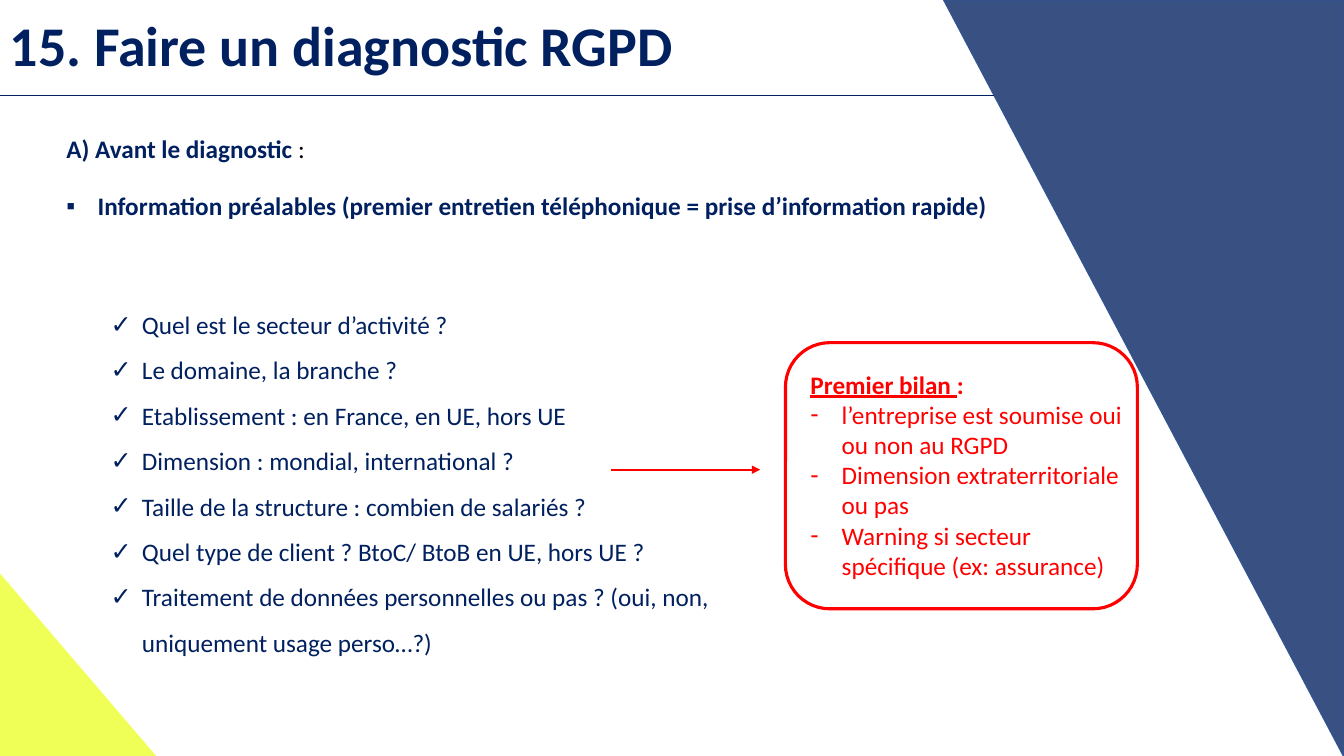
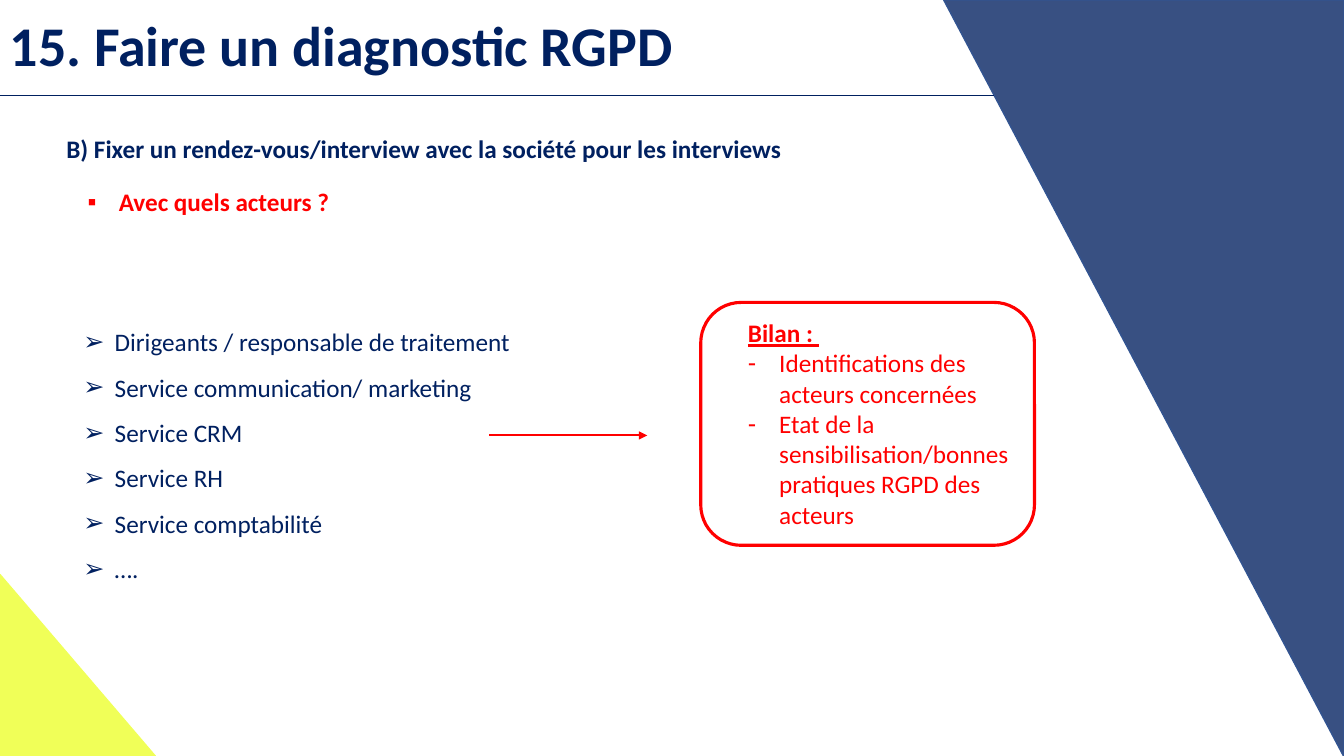
from lxml.etree import SubElement
from pptx import Presentation
from pptx.dml.color import RGBColor
from pptx.enum.shapes import MSO_CONNECTOR as Connector, MSO_SHAPE as Shape
from pptx.enum.text import MSO_ANCHOR as Anchor
from pptx.oxml.ns import qn
from pptx.util import Inches, Pt

NAVY = RGBColor(0x00, 0x20, 0x60)
EDGE_BLUE = RGBColor(0x32, 0x54, 0x91)
YELLOW = RGBColor(0xF0, 0xFF, 0x58)
RED = RGBColor(0xFF, 0x00, 0x00)
BLACK = RGBColor(0x00, 0x00, 0x00)
FONT = "Calibri"
INDENT = Inches(0.31)
TITLE = "15. Faire un diagnostic RGPD"

PAGES = [
    {
        "heading": ("A) Avant le diagnostic ", ":"),
        "heading_at": (0.56, 1.27, 4.09, 0.4),
        "topic": "Information préalables (premier entretien téléphonique = prise d’information rapide)",
        "topic_at": (0.56, 1.84, 9.67, 0.4),
        "topic_color": NAVY,
        "mark": "✓",
        "items": [
            "Quel est le secteur d’activité ?",
            "Le domaine, la branche ?",
            "Etablissement : en France, en UE, hors UE",
            "Dimension : mondial, international ?",
            "Taille de la structure : combien de salariés ?",
            "Quel type de client ? BtoC/ BtoB en UE, hors UE ?",
            "Traitement de données personnelles ou pas ? (oui, non, uniquement usage perso…?)",
        ],
        "items_at": (1, 2.87, 6.34, 3.69),
        "arrow": (6.06, 7.54, 4.66),
        "frame_at": (7.79, 3.4, 3.49, 2.64),
        "summary": ("Premier bilan ", ":"),
        "findings": [
            "l’entreprise est soumise oui ou non au RGPD",
            "Dimension extraterritoriale ou pas",
            "Warning si secteur spécifique (ex: assurance)",
        ],
        "findings_at": (7.94, 3.61, 3.33, 2.22),
    },
    {
        "heading": ("B) Fixer un rendez-vous/interview avec la société pour les interviews", ""),
        "heading_at": (0.56, 1.27, 8.96, 0.4),
        "topic": "Avec quels acteurs ?",
        "topic_at": (0.77, 1.8, 6.86, 0.4),
        "topic_color": RED,
        "mark": "➢",
        "items": [
            "Dirigeants / responsable de traitement",
            "Service communication/ marketing",
            "Service CRM",
            "Service RH",
            "Service comptabilité",
            "….",
        ],
        "items_at": (0.73, 3.04, 4.57, 2.78),
        "arrow": (4.85, 6.42, 4.32),
        "frame_at": (6.95, 3, 3.31, 2.41),
        "summary": ("Bilan : ", ""),
        "findings": [
            "Identifications des acteurs concernées",
            "Etat de la sensibilisation/bonnes pratiques RGPD des acteurs",
        ],
        "findings_at": (7.32, 3.1, 2.82, 2.22),
    },
]


def inches(values):
    return [Inches(value) for value in values]


def add_panel(page, kind, at, line_color, width, fill=None, alpha=None):
    panel = page.shapes.add_shape(kind, *inches(at))
    panel.shadow.inherit = False
    panel.line.color.rgb = line_color
    panel.line.width = Pt(width)
    if fill is None:
        panel.fill.background()
    else:
        panel.fill.solid()
        panel.fill.fore_color.rgb = fill
    if alpha is not None:
        color = panel.fill._xPr.find(".//" + qn("a:srgbClr"))
        SubElement(color, qn("a:alpha"), val=str(alpha * 1000))
    return panel


def add_line(page, start, end, y, color, width, arrow=False):
    line = page.shapes.add_connector(Connector.STRAIGHT, *inches((start, y, end, y)))
    line.line.color.rgb = color
    line.line.width = Pt(width)
    if arrow:
        SubElement(line.line._get_or_add_ln(), qn("a:tailEnd"), type="triangle")
    SubElement(line._element.spPr, qn("a:effectLst"))


def add_box(page, at):
    box = page.shapes.add_textbox(*inches(at))
    box.text_frame.word_wrap = True
    return box.text_frame


def write(frame, parts, color, size=18, bold=False, mark=None, spacing=None):
    para = frame.paragraphs[0]
    if para.runs:
        para = frame.add_paragraph()
    if mark:
        props = para._p.get_or_add_pPr()
        props.set("marL", str(INDENT))
        props.set("indent", str(-INDENT))
        SubElement(props, qn("a:buFont"), typeface="Arial")
        SubElement(props, qn("a:buChar"), char=mark)
    if spacing:
        para.line_spacing = spacing
    para.font.name = FONT
    para.font.size = Pt(size)
    para.font.bold = bold
    para.font.color.rgb = color
    for part in filter(None, parts):
        para.add_run().text = part
    return para.runs


def add_base(page):
    add_panel(page, Shape.RIGHT_TRIANGLE, (0, 5.7, 1.54, 1.8), YELLOW, 1, YELLOW)
    corner = add_panel(page, Shape.RIGHT_TRIANGLE, (9.36, 0, 3.97, 7.51), EDGE_BLUE, 1, NAVY, 78)
    corner.rotation = 180
    add_line(page, 0, 9.86, 0.95, NAVY, 1)
    title = add_box(page, (0, 0.24, 9.86, 0.48))
    title.vertical_anchor = Anchor.MIDDLE
    write(title, [TITLE], NAVY, size=40, bold=True, spacing=0.9)


def add_page(deck, content):
    page = deck.slides.add_slide(deck.slide_layouts[6])
    add_base(page)

    heading = write(add_box(page, content["heading_at"]), content["heading"], NAVY, bold=True)
    for span in heading[1:]:
        span.font.bold = False
        span.font.color.rgb = BLACK
    write(add_box(page, content["topic_at"]), [content["topic"]], content["topic_color"],
          bold=True, mark="▪")

    items = add_box(page, content["items_at"])
    for item in content["items"]:
        write(items, [item], NAVY, mark=content["mark"], spacing=1.5)

    add_line(page, *content["arrow"], RED, 1.5, arrow=True)
    add_panel(page, Shape.ROUNDED_RECTANGLE, content["frame_at"], RED, 2.25)
    findings = add_box(page, content["findings_at"])
    summary = write(findings, content["summary"], RED, bold=True)
    summary[0].font.underline = True
    for finding in content["findings"]:
        write(findings, [finding], RED, mark="-")


def main():
    deck = Presentation()
    deck.slide_width = Inches(13.33)
    deck.slide_height = Inches(7.5)
    for content in PAGES:
        add_page(deck, content)
    deck.save("out.pptx")


if __name__ == "__main__":
    main()
